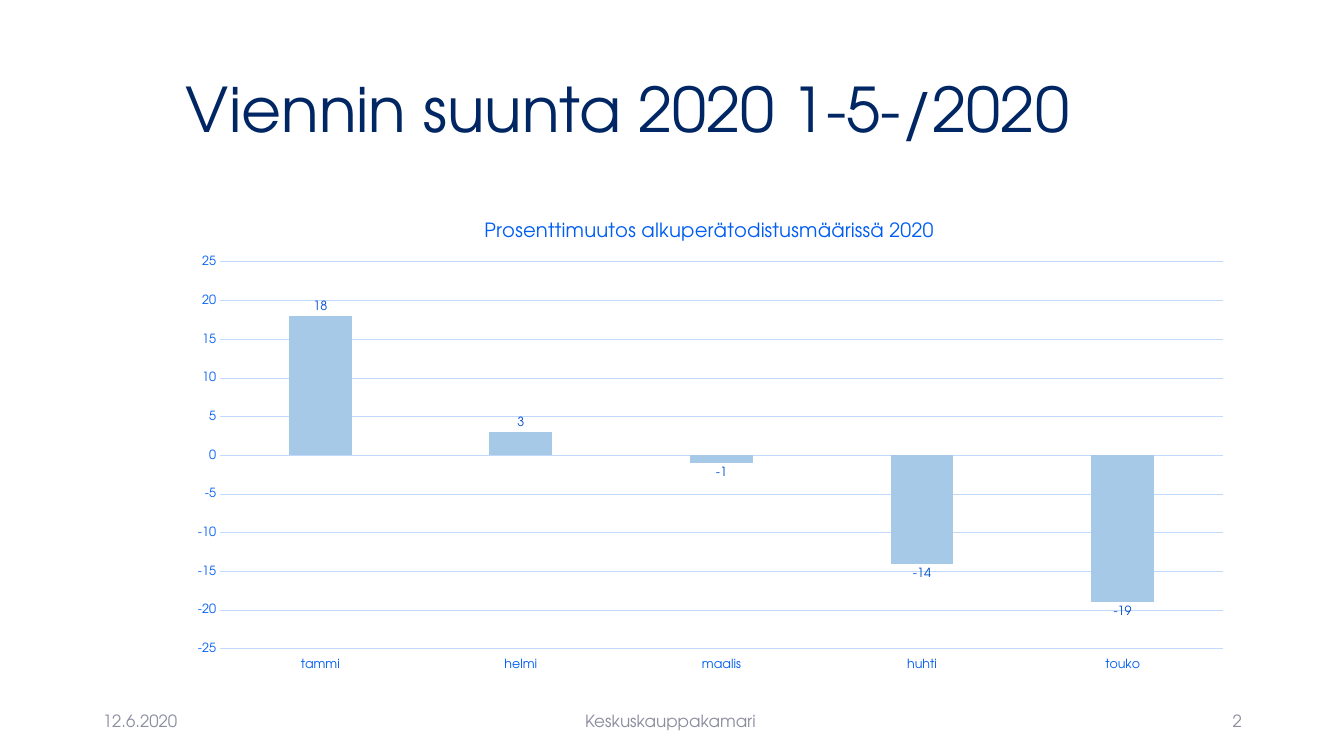
from lxml.etree import SubElement
from pptx import Presentation
from pptx.chart.data import CategoryChartData as ChartData
from pptx.dml.color import RGBColor as RGB
from pptx.enum.chart import XL_CHART_TYPE as Kind, XL_LABEL_POSITION as Spot
from pptx.enum.chart import XL_TICK_LABEL_POSITION as TickSpot, XL_TICK_MARK as Tick
from pptx.enum.text import MSO_ANCHOR as Anchor, PP_ALIGN as Align
from pptx.oxml.ns import qn
from pptx.util import Pt

PX = 914400 / 100.8
SIZE = (1344, 756)
FONT = "TeX Gyre Adventor"
COLORS = {"navy": "002663", "gray": "8C8E9F", "blue": "005DF3",
          "label": "004DCA", "grid": "C1D9FF", "bar": "A5C9E7"}

# text, box (left, top, width, height), size, colour, alignment, line spacing
TEXTS = [
    ("Viennin suunta 2020 1-5-/2020", (176, 40, 1067, 146), 44, "navy", Align.LEFT, 0.9),
    ("12.6.2020", (93, 701, 302, 40), 12, "gray", Align.LEFT, 1.0),
    ("Keskuskauppakamari", (446, 701, 449, 40), 12, "gray", Align.CENTER, 1.0),
    ("2", (950, 701, 302, 40), 12, "gray", Align.RIGHT, 1.0),
]
TITLE = "Prosenttimuutos alkuperätodistusmäärissä 2020"
CHANGES = {"tammi": 18, "helmi": 3, "maalis": -1, "huhti": -14, "touko": -19}
CHART = (176, 202, 1067, 480)
PLOT = (220, 262, 1003, 387)


def emu(box):
    return [round(n * PX) for n in box]


def color(name):
    return RGB.from_string(COLORS[name])


def style(font, size, name):
    font.name, font.size, font.bold = FONT, Pt(size), False
    font.color.rgb = color(name)


def rule(line):
    line.color.rgb, line.width = color("grid"), Pt(0.75)


def add_text(slide, text, box, size, name, align, space):
    frame = slide.shapes.add_textbox(*emu(box)).text_frame
    frame.word_wrap, frame.vertical_anchor = True, Anchor.MIDDLE
    para = frame.paragraphs[0]
    para.alignment, para.line_spacing = align, space
    run = para.add_run()
    run.text = text
    style(run.font, size, name)


def fix_plot(chart):
    """Pin the inner plot area to PLOT, as shares of the chart."""
    area = chart._chartSpace.chart.plotArea
    for old in area.findall(qn("c:layout")):
        area.remove(old)
    layout = SubElement(area, qn("c:layout"))
    area.insert(0, layout)
    manual = SubElement(layout, qn("c:manualLayout"))
    left, top, wide, high = CHART
    x, y, w, h = PLOT
    parts = {"layoutTarget": "inner", "xMode": "edge", "yMode": "edge",
             "x": (x - left) / wide, "y": (y - top) / high,
             "w": w / wide, "h": h / high}
    for tag, val in parts.items():
        SubElement(manual, qn("c:" + tag)).set("val", str(val))


def add_bars(slide):
    data = ChartData()
    data.categories = list(CHANGES)
    data.add_series(TITLE, list(CHANGES.values()))
    chart = slide.shapes.add_chart(Kind.COLUMN_CLUSTERED, *emu(CHART), data).chart
    style(chart.font, 10, "navy")
    chart.has_legend = False
    chart.has_title = True
    run = chart.chart_title.text_frame.paragraphs[0].add_run()
    run.text = TITLE
    style(run.font, 14, "blue")

    months, scale = chart.category_axis, chart.value_axis
    for axis in (months, scale):
        axis.major_tick_mark = axis.minor_tick_mark = Tick.NONE
        style(axis.tick_labels.font, 9, "blue")
    months.tick_label_position = TickSpot.LOW
    rule(months.format.line)
    scale.minimum_scale, scale.maximum_scale, scale.major_unit = -25, 25, 5
    scale.format.line.fill.background()
    rule(scale.major_gridlines.format.line)

    plot = chart.plots[0]
    plot.gap_width, plot.overlap, plot.vary_by_categories = 219, -27, False
    bars = plot.series[0]
    bars.invert_if_negative = False
    bars.format.fill.solid()
    bars.format.fill.fore_color.rgb = color("bar")
    labels = bars.data_labels
    labels.show_value, labels.position = True, Spot.OUTSIDE_END
    style(labels.font, 9, "label")
    fix_plot(chart)


def main():
    deck = Presentation()
    deck.slide_width, deck.slide_height = emu(SIZE)
    slide = deck.slides.add_slide(deck.slide_layouts[6])
    for item in TEXTS:
        add_text(slide, *item)
    add_bars(slide)
    deck.save("out.pptx")


if __name__ == "__main__":
    main()
